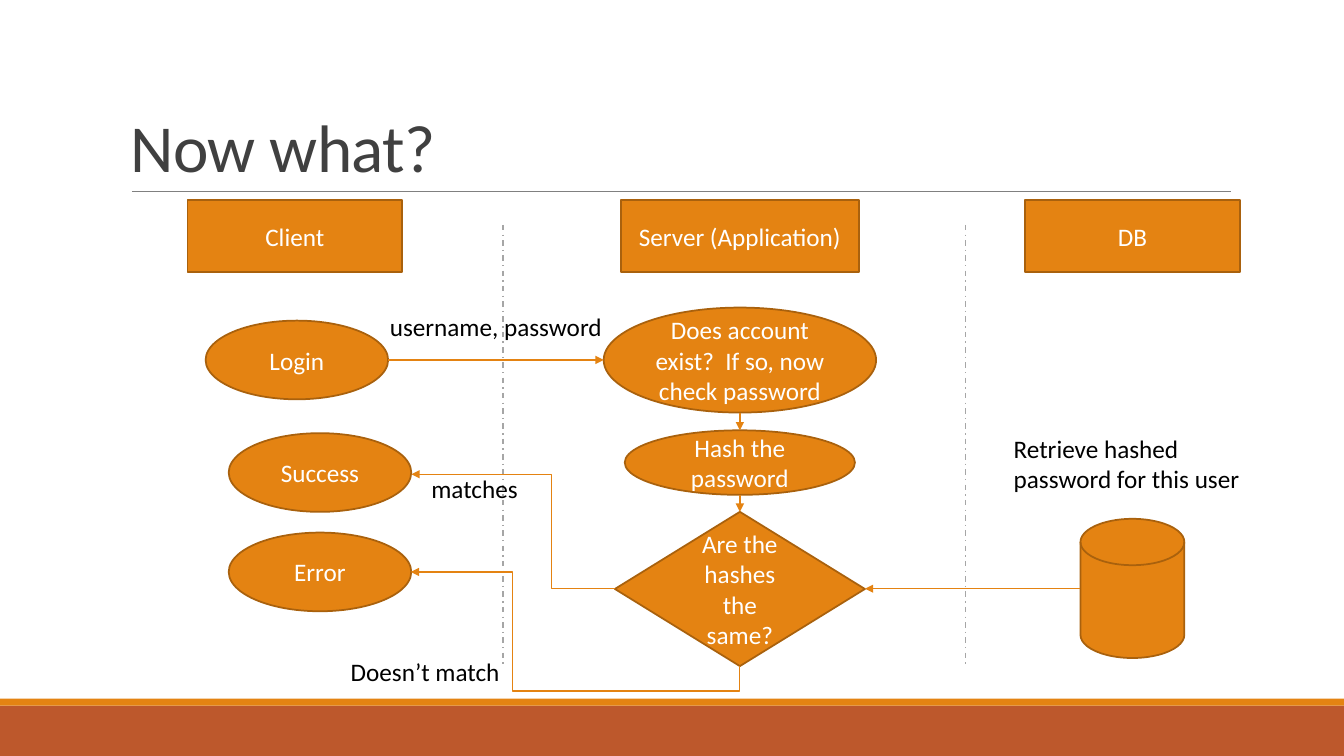
"""Build the password check flowchart slide."""
from dataclasses import dataclass

from pptx import Presentation
from pptx.dml.color import RGBColor
from pptx.enum import dml, shapes, text
from pptx.oxml import ns, xmlchemy
from pptx.util import Pt


@dataclass(frozen=True)
class Theme:
    """Colours, type sizes and line widths of the slide."""
    font: str = "Calibri"
    orange: str = "E48312"
    edge: str = "A9610D"
    rust: str = "BD582C"
    rule: str = "808080"
    lane: str = "A6A6A6"
    heading: str = "404040"
    black: str = "000000"
    white: str = "FFFFFF"
    title: int = 48
    body: int = 18
    outline: float = 1.25
    hairline: float = 0.5
    flow: float = 1


T = Theme()
KIND = shapes.MSO_SHAPE
ALIGN = text.PP_ALIGN
ANCHOR = text.MSO_ANCHOR
SERVER_X = 528.5
LOOP_Y = 420.5


def apply(obj, **values):
    """Set each given attribute on an object."""
    for name, value in values.items():
        setattr(obj, name, value)


def add_child(parent, tag, **attrs):
    """Append a drawing element with attributes."""
    child = xmlchemy.OxmlElement(tag)
    for name, value in attrs.items():
        child.set(name, value)
    parent.append(child)


def write(sp, words, color, size=T.body, align=ALIGN.LEFT, anchor=ANCHOR.TOP):
    """Put one formatted paragraph in a shape and return it."""
    tf = sp.text_frame
    apply(tf, word_wrap=True, vertical_anchor=anchor)
    p = tf.paragraphs[0]
    p.alignment = align
    r = p.add_run()
    r.text = words
    apply(r.font, name=T.font, size=Pt(size))
    r.font.color.rgb = RGBColor.from_string(color)
    return p


def add_node(s, kind, box, words="", fill=T.orange, edge=T.edge):
    """Add a filled shape with centred white text."""
    sp = s.shapes.add_shape(kind, *map(Pt, box))
    sp.shadow.inherit = False
    sp.fill.solid()
    sp.fill.fore_color.rgb = RGBColor.from_string(fill)
    if edge:
        sp.line.color.rgb = RGBColor.from_string(edge)
        sp.line.width = Pt(T.outline)
    else:
        sp.line.fill.background()
    if words:
        write(sp, words, T.white, align=ALIGN.CENTER, anchor=ANCHOR.MIDDLE)


def add_label(s, box, words, **style):
    """Add a text box and return its paragraph."""
    sp = s.shapes.add_textbox(*map(Pt, box))
    return write(sp, words, **{"color": T.black, **style})


def add_line(s, ends, color, width=T.flow, dash=None,
             kind=shapes.MSO_CONNECTOR.STRAIGHT):
    """Add a plain connector and return it."""
    c = s.shapes.add_connector(kind, *map(Pt, ends))
    c.line.color.rgb = RGBColor.from_string(color)
    apply(c.line, width=Pt(width), dash_style=dash)
    add_child(c._element.spPr, "a:effectLst")
    return c


def add_arrow(s, ends, **options):
    """Add a connector with an arrowhead at its end."""
    c = add_line(s, ends, T.orange, **options)
    add_child(c.line._get_or_add_ln(), "a:tailEnd", type="triangle")
    return c


def add_elbow(s, ends, preset, adjusts, turn=0):
    """Add a bent arrow with its bends placed and its frame turned."""
    c = add_arrow(s, ends, kind=shapes.MSO_CONNECTOR.ELBOW)
    spPr = c._element.spPr
    spPr.find(ns.qn("a:xfrm")).set("rot", str(turn * 60000))
    geom = spPr.find(ns.qn("a:prstGeom"))
    geom.set("prst", preset)
    guides = geom.find(ns.qn("a:avLst"))
    if guides is None:
        add_child(geom, "a:avLst")
        guides = geom.find(ns.qn("a:avLst"))
    for i, share in enumerate(adjusts, 1):
        add_child(guides, "a:gd", name=f"adj{i}",
                  fmla=f"val {round(share * 100000)}")


def add_frame(s):
    """Add the footer bars, the title and its rule."""
    add_node(s, KIND.RECTANGLE, (0, 504, 960, 36), fill=T.rust, edge=None)
    add_node(s, KIND.RECTANGLE, (0, 499, 960, 5), edge=None)
    add_line(s, (94.3, 136.8, 879.1, 136.8), T.rule, T.hairline)
    p = add_label(s, (86.4, 22.3, 792, 114.5), "Now what?", color=T.heading,
                  size=T.title, anchor=ANCHOR.BOTTOM)
    p.line_spacing = 0.85
    p.runs[0].font._element.set("spc", "-50")


def add_lanes(s):
    """Add the lane headers and the dashed dividers."""
    for x, width, words in ((133.9, 153.4, "Client"),
                            (443.5, 169.9, "Server (Application)"),
                            (732.2, 153.4, "DB")):
        add_node(s, KIND.RECTANGLE, (x, 142.6, width, 51.8), words)
    for x in (359.3, 689.8):
        add_line(s, (x, 160.6, x, 474.5), T.lane,
                 dash=dml.MSO_LINE.DASH_DOT)


def add_steps(s):
    """Add the steps of the flow and their labels."""
    for x, y, words in ((146.9, 229, "Login"), (163.4, 309.4, "Success"),
                        (163.4, 380.4, "Error")):
        add_node(s, KIND.OVAL, (x, y, 130.4, 56.2), words)
    for kind, y, width, height, words in (
            (KIND.OVAL, 219.7, 194.6, 75,
             "Does account exist?  If so, now check password"),
            (KIND.OVAL, 307.4, 164.4, 46.1, "Hash the password"),
            (KIND.FLOWCHART_DECISION, 365.6, 178.6, 110.2,
             "Are the hashes the same?")):
        add_node(s, kind, (SERVER_X - width / 2, y, width, height), words)
    add_node(s, KIND.FLOWCHART_MAGNETIC_DISK, (771.8, 370.6, 74.2, 99.4))
    for box, words in (((271.4, 218.9, 169.9, 29), "username, password"),
                       ((301, 334.8, 130.3, 29), "matches"),
                       ((243.4, 465.1, 130.3, 29), "Doesn’t match"),
                       ((717, 306, 182.2, 51), "Retrieve hashed password for this user")):
        add_label(s, box, words)


def add_flow(s):
    """Add the arrows between the steps."""
    for ends in ((277.2, 257.1, 431.3, 257.1),
                 (SERVER_X, 294.8, SERVER_X, 307.4),
                 (SERVER_X, 353.5, SERVER_X, 365.6),
                 (771.8, LOOP_Y, 617.8, LOOP_Y)):
        add_arrow(s, ends)
    add_elbow(s, (439.2, LOOP_Y, 293.8, 338.8), "bentConnector3", (0.31,))
    add_elbow(s, (444.3, 324.7, 377.3, 559.4), "bentConnector4",
              (-0.27, 0.69), turn=90)


def main():
    """Create and save the presentation."""
    prs = Presentation()
    apply(prs, slide_width=Pt(960), slide_height=Pt(540))
    s = prs.slides.add_slide(prs.slide_layouts[6])
    for build in (add_frame, add_lanes, add_steps, add_flow):
        build(s)
    prs.save("out.pptx")


if __name__ == "__main__":
    main()
